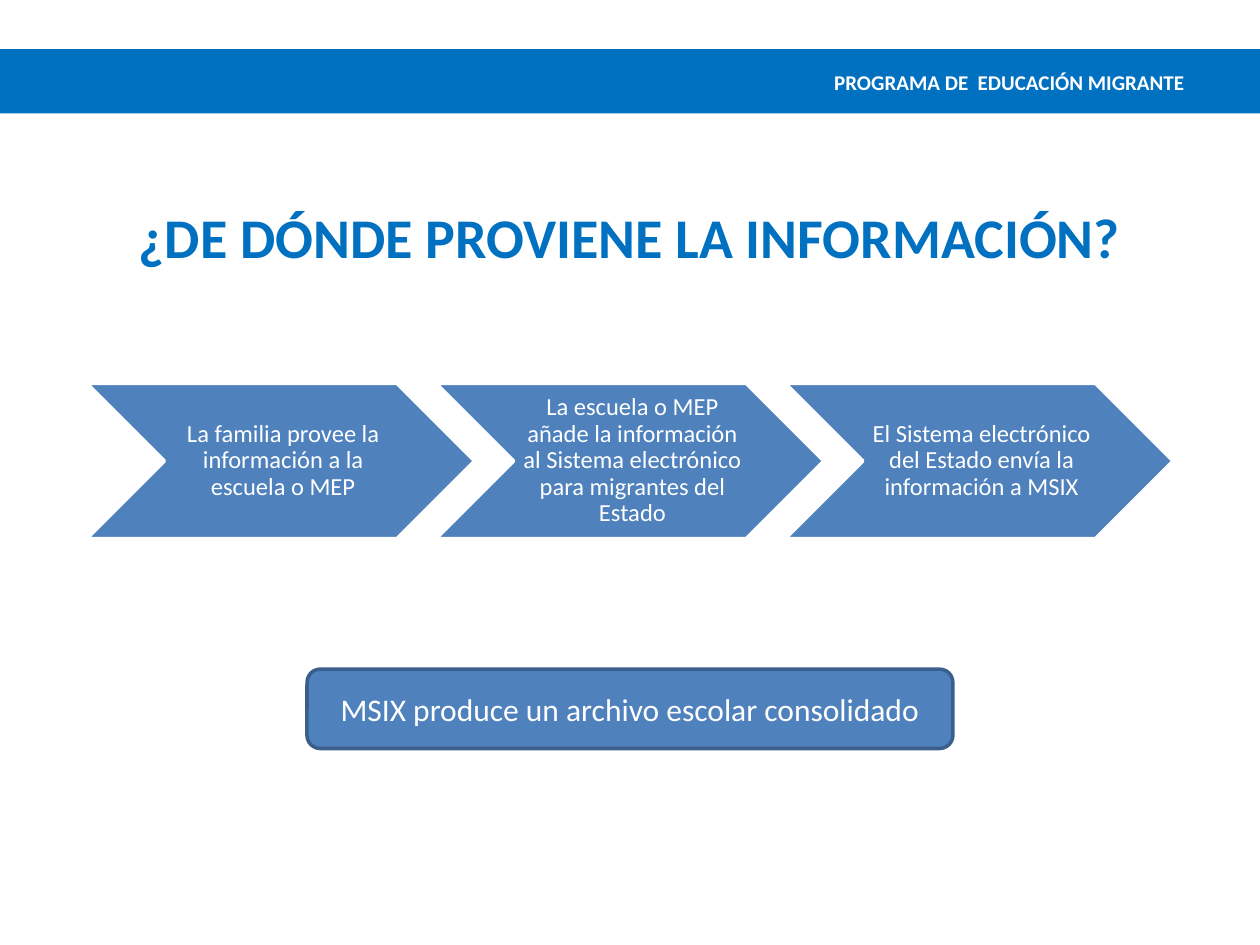
from pptx import Presentation
from pptx.dml.color import RGBColor
from pptx.enum.shapes import MSO_SHAPE
from pptx.enum.text import MSO_ANCHOR, PP_ALIGN
from pptx.util import Cm, Pt

WHITE = RGBColor(0xFF, 0xFF, 0xFF)
BANNER_BLUE = RGBColor(0x00, 0x70, 0xC0)
SHAPE_BLUE = RGBColor(0x4F, 0x81, 0xBD)
BORDER_BLUE = RGBColor(0x3A, 0x5F, 0x8C)

STEPS = [
    "La familia provee la información a la escuela o MEP",
    "La escuela o MEP añade la información al Sistema electrónico "
    "para migrantes del Estado",
    "El Sistema electrónico del Estado envía la información a MSIX",
]
STEP_LEFT, STEP_PITCH = 1.75, 7.04
STEP_INSETS = {"margin_left": Cm(0.15), "margin_right": Cm(0.05),
               "margin_top": Cm(0.05), "margin_bottom": Cm(0.05)}


def write(box, text, size, color=WHITE, bold=False, align=PP_ALIGN.CENTER,
          anchor=MSO_ANCHOR.MIDDLE):
    frame = box.text_frame
    frame.word_wrap = True
    frame.vertical_anchor = anchor
    para = frame.paragraphs[0]
    para.alignment = align
    span = para.add_run()
    span.text = text
    font_format = {"name": "Calibri", "size": Pt(size), "bold": bold}
    for name, value in font_format.items():
        setattr(span.font, name, value)
    span.font.color.rgb = color
    return frame


def place(box, left, top, width, height):
    position = {"left": left, "top": top, "width": width, "height": height}
    for name, value in position.items():
        setattr(box, name, Cm(value))


def add_block(page, kind, bounds, fill, border=None):
    block = page.shapes.add_shape(kind, *map(Cm, bounds))
    block.shadow.inherit = False
    block.fill.solid()
    block.fill.fore_color.rgb = fill
    if border is None:
        block.line.fill.background()
    else:
        block.line.color.rgb = border
        block.line.width = Pt(2)
    return block


def add_banner(page):
    add_block(page, MSO_SHAPE.RECTANGLE, (0, 0.99, 25.4, 1.3), BANNER_BLUE)
    label = page.shapes.add_textbox(Cm(4.88), Cm(1.27), Cm(19.25), Cm(1.27))
    write(label, "PROGRAMA DE  EDUCACIÓN MIGRANTE", 12, bold=True,
          align=PP_ALIGN.RIGHT, anchor=MSO_ANCHOR.TOP)


def add_title(page, text):
    title = page.shapes.title
    place(title, 1.27, 3.18, 22.86, 3.18)
    write(title, text, 32, BANNER_BLUE, bold=True)


def add_step(page, index, text):
    bounds = (STEP_LEFT + index * STEP_PITCH, 7.73, 7.82, 3.13)
    chevron = add_block(page, MSO_SHAPE.CHEVRON, bounds, SHAPE_BLUE, WHITE)
    frame = write(chevron, text, 14)
    for name, value in STEP_INSETS.items():
        setattr(frame, name, value)
    frame.paragraphs[0].line_spacing = 0.9


def add_result(page, text):
    box = add_block(page, MSO_SHAPE.ROUNDED_RECTANGLE,
                    (6.19, 13.49, 13.02, 1.6), SHAPE_BLUE, BORDER_BLUE)
    write(box, text, 18)


def main():
    deck = Presentation()
    deck.slide_width, deck.slide_height = Cm(25.4), Cm(19.05)
    page = deck.slides.add_slide(deck.slide_layouts[5])
    add_banner(page)
    add_title(page, "¿DE DÓNDE PROVIENE LA INFORMACIÓN?")
    for index, text in enumerate(STEPS):
        add_step(page, index, text)
    add_result(page, "MSIX produce un archivo escolar consolidado")
    deck.save("out.pptx")


if __name__ == "__main__":
    main()
